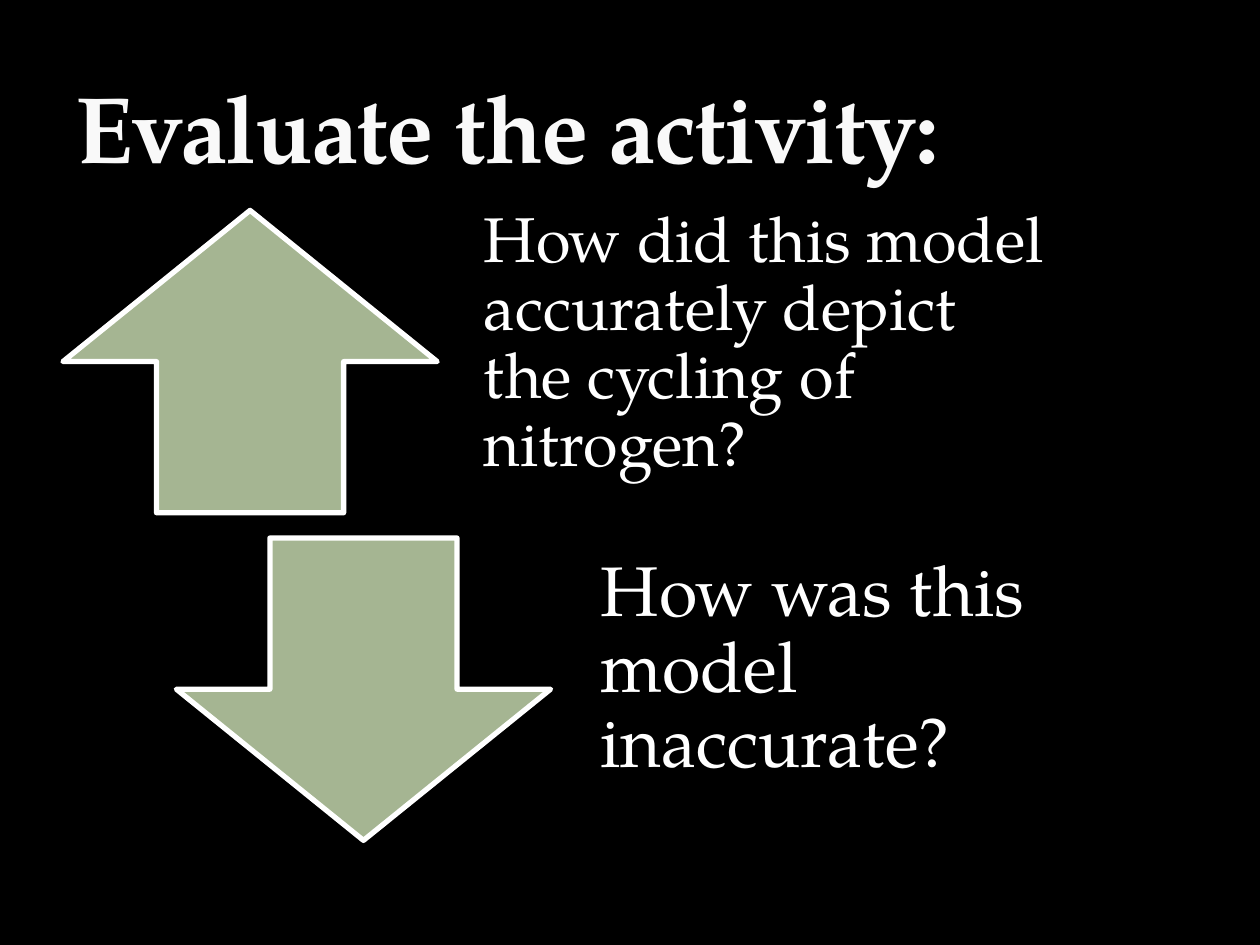
from lxml.etree import SubElement
from pptx import Presentation
from pptx.dml.color import RGBColor
from pptx.enum.shapes import MSO_SHAPE as Preset
from pptx.enum.text import MSO_ANCHOR as Anchor
from pptx.oxml.ns import qn
from pptx.util import Inches, Pt

BLACK = RGBColor(0x00, 0x00, 0x00)
WHITE = RGBColor(0xFF, 0xFF, 0xFF)
OFF_WHITE = RGBColor(0xF9, 0xF9, 0xF9)
SAGE = RGBColor(0xA5, 0xB5, 0x92)
FONT = "TeX Gyre Pagella"

ROW_HEIGHT = 2.4
ARROW_WIDTH = 2.97
QUESTION_WIDTH = 5.04
# preset, arrow left, question left, top, inset, text size, question
ROWS = [
    (Preset.UP_ARROW, 0.5, 3.56, 1.67, 0.28, 36,
     "How did this model accurately depict the cycling of nitrogen?"),
    (Preset.DOWN_ARROW, 1.4, 4.46, 4.27, 0.31, 40,
     "How was this model inaccurate?"),
]


def add_text(page, left, top, width, height, text, size, color, anchor):
    """Add a wrapped text box and return its frame."""
    box = page.shapes.add_textbox(Inches(left), Inches(top), Inches(width), Inches(height))
    frame = box.text_frame
    frame.word_wrap = True
    frame.vertical_anchor = anchor
    para = frame.paragraphs[0]
    para.text = text
    para.font.name = FONT
    para.font.size = Pt(size)
    para.font.color.rgb = color
    return frame


def add_title(page, text):
    frame = add_text(page, 0.5, 0.17, 9, 1.33, text, 54, OFF_WHITE, Anchor.BOTTOM)
    para = frame.paragraphs[0]
    para.font.bold = True
    para.runs[0].font._element.set("spc", "-100")  # one point tighter


def add_arrow(page, preset, left, top):
    arrow = page.shapes.add_shape(
        preset, Inches(left), Inches(top), Inches(ARROW_WIDTH), Inches(ROW_HEIGHT))
    arrow.shadow.inherit = False
    arrow.fill.solid()
    arrow.fill.fore_color.rgb = SAGE
    arrow.line.color.rgb = WHITE
    arrow.line.width = Pt(3)
    SubElement(arrow.line._get_or_add_ln(), qn("a:round"))


def add_question(page, left, top, inset, size, text):
    frame = add_text(page, left, top, QUESTION_WIDTH, ROW_HEIGHT, text, size, WHITE,
                     Anchor.MIDDLE)
    frame.margin_left = frame.margin_right = frame.margin_bottom = Inches(inset)
    frame.margin_top = 0
    frame.paragraphs[0].line_spacing = 0.9


def main():
    deck = Presentation()
    deck.slide_width, deck.slide_height = Inches(10), Inches(7.5)
    page = deck.slides.add_slide(deck.slide_layouts[6])
    page.background.fill.solid()
    page.background.fill.fore_color.rgb = BLACK

    for preset, arrow_left, question_left, top, inset, size, question in ROWS:
        add_arrow(page, preset, arrow_left, top)
        add_question(page, question_left, top, inset, size, question)
    add_title(page, "Evaluate the activity:")
    deck.save("out.pptx")


if __name__ == "__main__":
    main()
